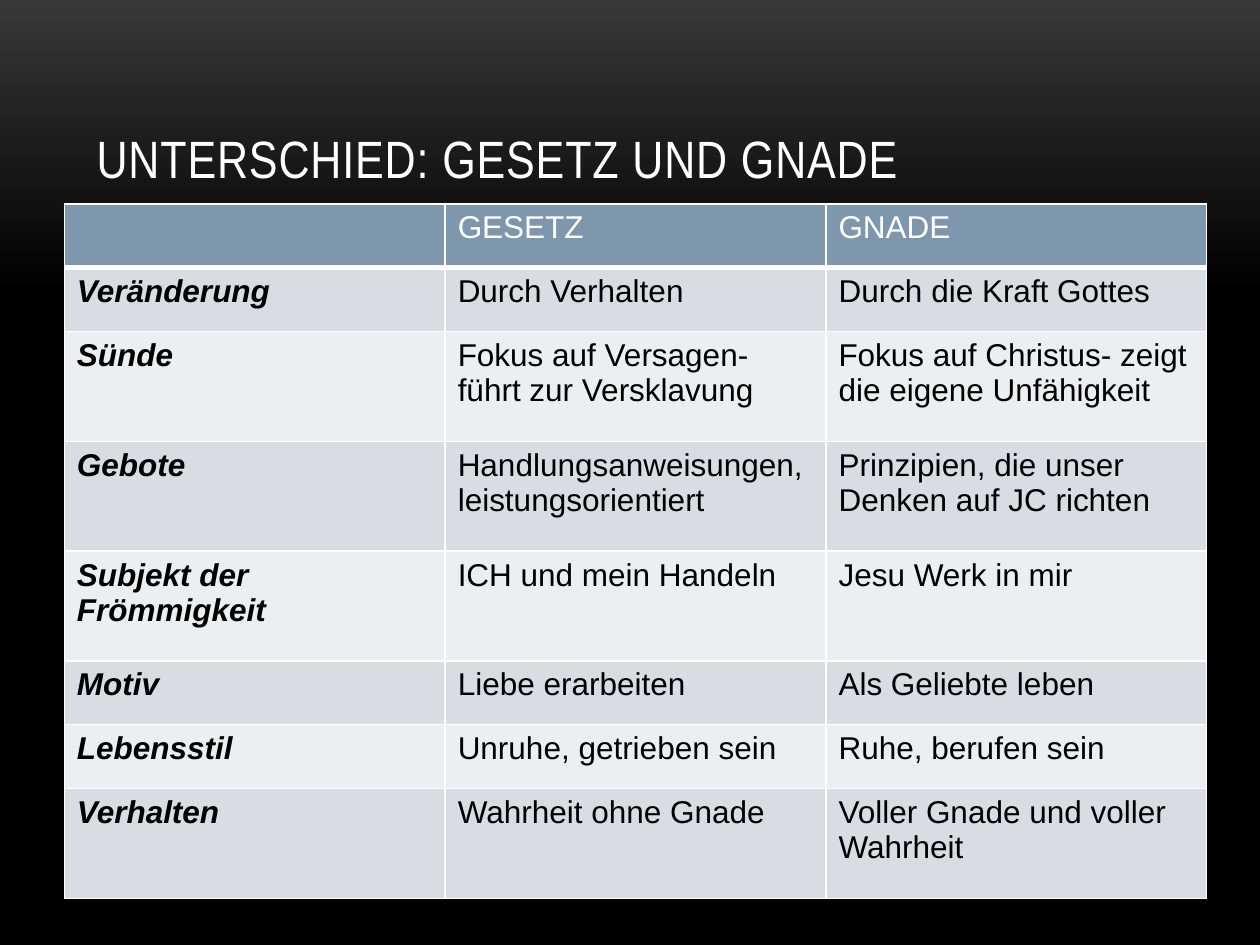
"""Build a slide with a table contrasting law and grace."""
import pptx
import pptx.util
import pptx.dml.color
import pptx.enum.text
import pptx.oxml
import pptx.oxml.ns

Pt = pptx.util.Pt
NAMESPACE = pptx.oxml.ns.nsdecls("a")
COLORS = {
    "white": "FFFFFF",
    "black": "000000",
    "glow": "383838",
    "header": "7E97AD",
    "band_dark": "D8DDE3",
    "band_light": "ECEFF1",
}
SHORT, TALL = 36.4, 62.8
COLUMN_WIDTH = 217.6
ROWS = [
    (SHORT, ["", "GESETZ", "GNADE"]),
    (SHORT, ["Veränderung", "Durch Verhalten", "Durch die Kraft Gottes"]),
    (TALL, ["Sünde", "Fokus auf Versagen- führt zur Versklavung",
            "Fokus auf Christus- zeigt die eigene Unfähigkeit"]),
    (TALL, ["Gebote", "Handlungsanweisungen, leistungsorientiert",
            "Prinzipien, die unser Denken auf JC richten"]),
    (TALL, ["Subjekt der Frömmigkeit", "ICH und mein Handeln", "Jesu Werk in mir"]),
    (SHORT, ["Motiv", "Liebe erarbeiten", "Als Geliebte leben"]),
    (SHORT, ["Lebensstil", "Unruhe, getrieben sein", "Ruhe, berufen sein"]),
    (TALL, ["Verhalten", "Wahrheit ohne Gnade", "Voller Gnade und voller Wahrheit"]),
]


def add_span(para, text, font, size, color, strong=False):
    span = para.add_run()
    span.text = text
    span.font.name = font
    span.font.size = Pt(size)
    span.font.bold = strong
    span.font.italic = strong
    span.font.color.rgb = pptx.dml.color.RGBColor.from_string(COLORS[color])
    return span


def add_border(cell, side, width):
    cell._tc.get_or_add_tcPr().append(pptx.oxml.parse_xml(
        f'<a:ln{side} {NAMESPACE} w="{Pt(width)}"><a:solidFill>'
        f'<a:srgbClr val="{COLORS["white"]}"/></a:solidFill></a:ln{side}>'))


deck = pptx.Presentation()
deck.slide_width, deck.slide_height = Pt(720), Pt(540)
page = deck.slides.add_slide(deck.slide_layouts[5])

backdrop = page.background.fill
backdrop.gradient()
backdrop.gradient_angle = 270
stops = page._element.xpath(".//a:gsLst")[0]
for stop in list(stops):
    stops.remove(stop)
for percent, color in [(0, "glow"), (31, "black"), (100, "black")]:
    stops.append(pptx.oxml.parse_xml(
        f'<a:gs {NAMESPACE} pos="{percent * 1000}"><a:srgbClr val="{COLORS[color]}"/></a:gs>'))

title = page.shapes.title
title.left, title.top, title.width, title.height = Pt(48), Pt(21.6), Pt(624), Pt(90)
title.text_frame.vertical_anchor = pptx.enum.text.MSO_ANCHOR.BOTTOM
title.text_frame.word_wrap = True
heading = title.text_frame.paragraphs[0]
heading.alignment = pptx.enum.text.PP_ALIGN.LEFT
span = add_span(heading, "UNTERSCHIED: GESETZ UND GNADE", "Arial Narrow", 30, "white")
span._r.get_or_add_rPr().set("spc", "50")

total_height = sum(height for height, texts in ROWS)
table = page.shapes.add_table(len(ROWS), 3, Pt(36.8), Pt(116.6),
                              Pt(3 * COLUMN_WIDTH), Pt(total_height)).table
for column in table.columns:
    column.width = Pt(COLUMN_WIDTH)

for row_index, (height, texts) in enumerate(ROWS):
    table.rows[row_index].height = Pt(height)
    is_header = row_index == 0
    band = "header" if is_header else "band_dark" if row_index % 2 else "band_light"
    for column_index, text in enumerate(texts):
        cell = table.cell(row_index, column_index)
        for side in "LRTB":
            add_border(cell, side, 3 if is_header and side == "B" else 1)
        cell.fill.solid()
        cell.fill.fore_color.rgb = pptx.dml.color.RGBColor.from_string(COLORS[band])
        if text:
            add_span(cell.text_frame.paragraphs[0], text, "Arial", 18,
                     "white" if is_header else "black", column_index == 0)

deck.save("out.pptx")
